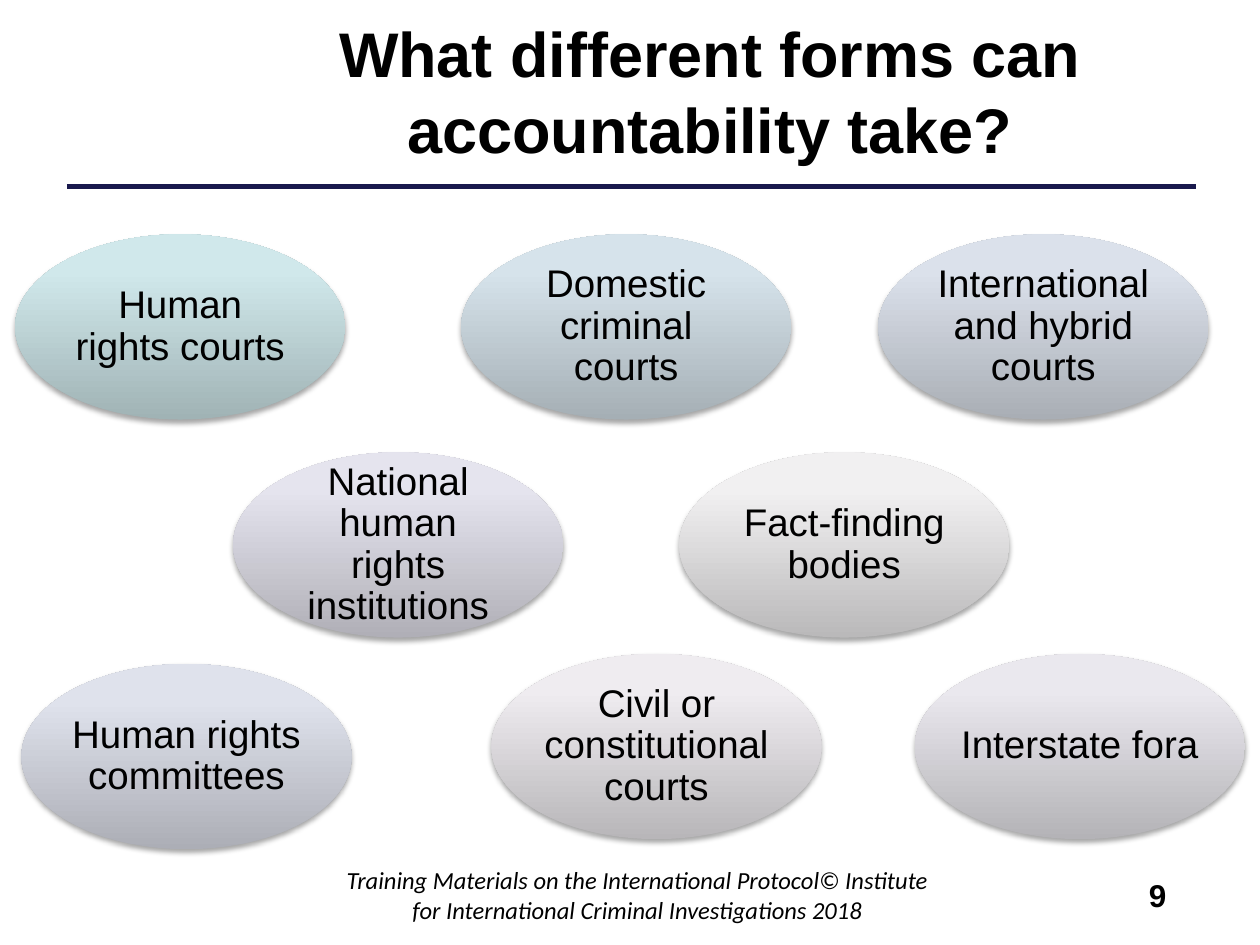
from copy import deepcopy

from lxml import etree
from pptx import Presentation
from pptx.dml.color import RGBColor
from pptx.enum import shapes, text
from pptx.oxml import ns
from pptx.util import Inches, Pt

OVAL_WIDTH, OVAL_HEIGHT = 2.62, 1.47
OVALS = [
    ("Human rights courts", 0.12, 1.86, 0.08, ("A0B3B5", "D0E8EB", "D1EAEC")),
    ("Domestic criminal courts", 3.66, 1.86, 0.08, ("A5AFB5", "D6E3EB", "D6E5ED")),
    ("International and hybrid courts", 6.97, 1.86, 0.08, ("A9AEB5", "DBE1EB", "DCE2ED")),
    ("Human rights committees", 0.17, 5.27, 0, ("ACAEB6", "DFE2EC", "E0E3ED")),
    ("National human rights institutions", 1.85, 3.59, 0.08, ("B0AFB7", "E5E4EE", "E6E4EF")),
    ("Interstate fora", 7.26, 5.19, None, ("B4B3B7", "EAE8EE", "EBE9EF")),
    ("Civil or constitutional courts", 3.9, 5.19, 0, ("B8B6B9", "EFECF0", "F0EDF1")),
    ("Fact-finding bodies", 5.39, 3.59, 0.08, ("BAB9BA", "F1F0F1", "F3F1F3")),
]


def color(value):
    """Turn a hex string into a colour."""
    return RGBColor.from_string(value)


def place(shape, left, top, width, height):
    """Move and size a shape, in inches."""
    shape.left, shape.top = Inches(left), Inches(top)
    shape.width, shape.height = Inches(width), Inches(height)


def write(shape, words, size, font="Arial", bold=False, italic=False,
          align=text.PP_ALIGN.CENTER, anchor=text.MSO_ANCHOR.MIDDLE):
    """Put one formatted paragraph in a shape and return the paragraph."""
    frame = shape.text_frame
    frame.text = words
    frame.word_wrap = True
    frame.vertical_anchor = anchor
    para = frame.paragraphs[0]
    para.alignment = align
    style = para.runs[0].font
    style.name, style.size, style.bold, style.italic = font, Pt(size), bold, italic
    style.color.rgb = color("000000")
    return para


def fill_gradient(shape, colors):
    """Fill a shape from bottom to top with three colour stops."""
    shape.fill.gradient()
    shape.fill.gradient_angle = 90
    stop_list = shape.element.spPr.find(".//" + ns.qn("a:gsLst"))
    stop_list.append(deepcopy(stop_list[-1]))
    for stop, position, value in zip(shape.fill.gradient_stops, (0, 0.8, 1), colors):
        stop.position = position
        stop.color.rgb = color(value)


def add_shadow(shape):
    """Give a shape a soft shadow just below it."""
    shape.shadow.inherit = False
    effects = shape.element.spPr.find(ns.qn("a:effectLst"))
    shadow = etree.SubElement(effects, ns.qn("a:outerShdw"), blurRad=str(Pt(3.1)),
                              dist=str(Pt(1.8)), dir="5400000", rotWithShape="0")
    shade = etree.SubElement(shadow, ns.qn("a:srgbClr"), val="000000")
    etree.SubElement(shade, ns.qn("a:alpha"), val="35000")


def add_header(page, left, top, width, height):
    """Place the title and the rule below it."""
    place(page.shapes.title, left, top, width, height)
    write(page.shapes.title, "What different forms can accountability take?", 36, bold=True)
    rule = page.shapes.add_connector(shapes.MSO_CONNECTOR.STRAIGHT, Inches(0.53),
                                     Inches(1.48), Inches(9.49), Inches(1.48))
    rule.line.color.rgb = color("19194D")
    rule.line.width = Pt(2.5)
    etree.SubElement(rule.element.spPr, ns.qn("a:effectLst"))


def add_oval(page, words, left, top, inset, colors):
    """Draw one form of accountability; without an inset its text stays on one line."""
    oval = page.shapes.add_shape(shapes.MSO_SHAPE.OVAL, Inches(left), Inches(top),
                                 Inches(OVAL_WIDTH), Inches(OVAL_HEIGHT))
    fill_gradient(oval, colors)
    oval.line.fill.background()
    add_shadow(oval)
    write(oval, words, 22).line_spacing = 0.9
    frame = oval.text_frame
    frame.word_wrap = inset is not None
    frame.margin_left = frame.margin_right = Inches(inset or 0)
    frame.margin_top = frame.margin_bottom = Inches(0.06)


def add_note(page, words, left, top, width, height, size, **style):
    """Place a text box at the foot of the page."""
    box = page.shapes.add_textbox(Inches(left), Inches(top), Inches(width), Inches(height))
    write(box, words, size, anchor=text.MSO_ANCHOR.TOP, **style)


def main():
    """Build the slide and save it."""
    deck = Presentation()
    deck.slide_width, deck.slide_height = Inches(10), Inches(7.5)
    page = deck.slides.add_slide(deck.slide_layouts[5])
    add_header(page, 1.54, 0.06, 8.19, 1.31)
    add_note(page, "Training Materials on the International Protocol© Institute "
             "for International Criminal Investigations 2018",
             2.56, 6.82, 5, 0.63, 14, font="Calibri", italic=True)
    for oval in OVALS:
        add_oval(page, *oval)
    add_note(page, "9", 9.02, 6.9, 0.99, 0.4, 18, bold=True, align=text.PP_ALIGN.LEFT)
    deck.save("out.pptx")


if __name__ == "__main__":
    main()
